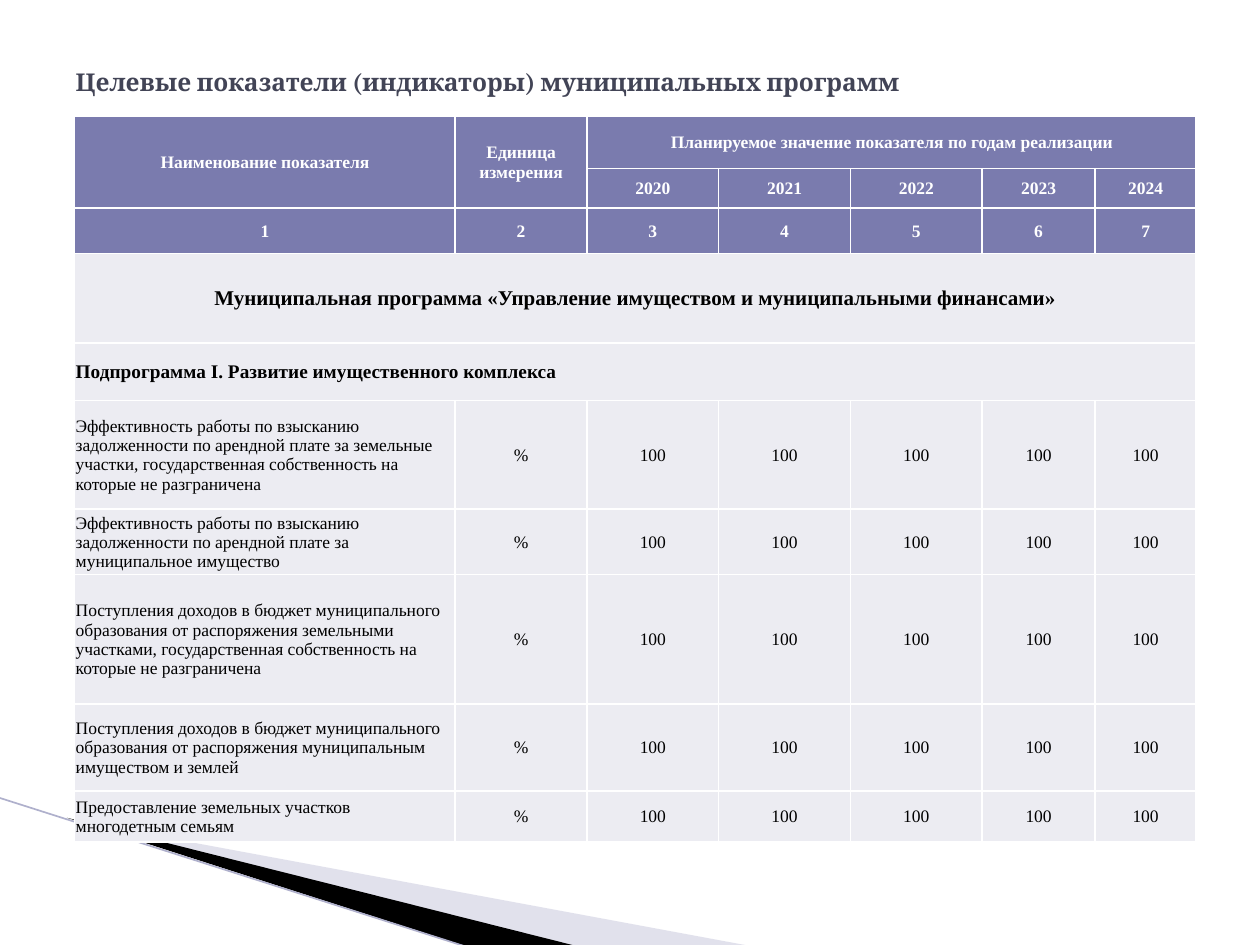
from lxml import etree
from pptx import Presentation
from pptx.dml.color import RGBColor
from pptx.enum.shapes import MSO_CONNECTOR
from pptx.enum.text import MSO_ANCHOR, MSO_AUTO_SIZE, PP_ALIGN
from pptx.oxml.ns import qn
from pptx.util import Pt

LEFT, CENTER = PP_ALIGN.LEFT, PP_ALIGN.CENTER
MIDDLE = MSO_ANCHOR.MIDDLE
STRAIGHT = MSO_CONNECTOR.STRAIGHT
NO_AUTOFIT = MSO_AUTO_SIZE.NONE
TITLE_ONLY = 5

COLORS = {
    "title": "424456", "head": "7A7BAE", "body": "ECECF2", "white": "FFFFFF",
    "black": "000000", "pale": "B6B6D1", "stripe": "AFB0CC",
}
TITLE = "Целевые показатели (индикаторы) муниципальных программ"
HEAD = [
    ["Наименование показателя", "Единица измерения",
     "Планируемое значение показателя по годам реализации"],
    [None, None, "2020", "2021", "2022", "2023", "2024"],
    ["1", "2", "3", "4", "5", "6", "7"],
]
PROGRAM = "Муниципальная программа «Управление имуществом и муниципальными финансами»"
SUBPROGRAM = "Подпрограмма I. Развитие имущественного комплекса"
INDICATORS = [
    "Эффективность работы по взысканию задолженности по арендной плате за земельные "
    "участки, государственная собственность на которые не разграничена",
    "Эффективность работы по взысканию задолженности по арендной плате за "
    "муниципальное имущество",
    "Поступления доходов в бюджет муниципального образования от распоряжения земельными "
    "участками, государственная собственность на которые не разграничена",
    "Поступления доходов в бюджет муниципального образования от распоряжения "
    "муниципальным имуществом и землей",
    "Предоставление земельных участков многодетным семьям",
]
UNIT_AND_VALUES = ["%"] + ["100"] * 5
ROWS = HEAD + [[PROGRAM], [SUBPROGRAM]] + [[name] + UNIT_AND_VALUES for name in INDICATORS]
PROGRAM_ROW = len(HEAD)
SUBPROGRAM_ROW = PROGRAM_ROW + 1
# first row, first column, last row, last column
MERGES = [(0, 0, 1, 0), (0, 1, 1, 1), (0, 2, 0, 6),
          (PROGRAM_ROW, 0, PROGRAM_ROW, 6), (SUBPROGRAM_ROW, 0, SUBPROGRAM_ROW, 6)]

TABLE_LEFT, TABLE_TOP = 42.7, 66.3
COLUMN_WIDTHS = [217.4, 75.4, 75.2, 75.4, 75.2, 64.6, 57.8]
ROW_HEIGHTS = [30, 22.6, 26, 51, 33, 62, 37.4, 74, 49.7, 29]

# corner points, colour, opacity in percent
WEDGES = [
    ([(39.6, 468.4), (428.4, 540.5), (328.3, 540.5)], "pale", 40),
    ([(38.2, 467.3), (329, 540.5), (267.8, 541.2)], "black", 100),
]
STRIPE = (-0.7, 455.8, 267.1, 541.2)


def color(name):
    return RGBColor.from_string(COLORS[name])


def write(frame, text, font="Times New Roman", size=10, bold=False, ink="black", align=CENTER):
    para = frame.paragraphs[0]
    para.alignment = align
    span = para.add_run()
    span.text = text
    span.font.name = font
    span.font.size = Pt(size)
    span.font.bold = bold
    span.font.color.rgb = color(ink)


def add_wedge(page, points, fill, opacity):
    corners = [(Pt(x), Pt(y)) for x, y in points]
    builder = page.shapes.build_freeform(*corners[0])
    builder.add_line_segments(corners[1:], close=True)
    wedge = builder.convert_to_shape()
    wedge.shadow.inherit = False
    wedge.line.fill.background()
    wedge.fill.solid()
    wedge.fill.fore_color.rgb = color(fill)
    if opacity < 100:
        tint = wedge.fill._xPr.find(".//" + qn("a:srgbClr"))
        etree.SubElement(tint, qn("a:alpha"), val=str(opacity * 1000))


def add_stripe(page):
    stripe = page.shapes.add_connector(STRAIGHT, *map(Pt, STRIPE))
    stripe.line.color.rgb = color("stripe")
    stripe.line.width = Pt(0.95)
    etree.SubElement(stripe._element.spPr, qn("a:effectLst"))


def style_cell(cell, fill):
    """Set borders, fill, margins and anchor; borders must precede the fill in the XML."""
    properties = cell._tc.get_or_add_tcPr()
    for side in ("lnL", "lnR", "lnT", "lnB"):
        border = etree.SubElement(properties, qn("a:" + side), w=str(Pt(1)))
        solid = etree.SubElement(border, qn("a:solidFill"))
        etree.SubElement(solid, qn("a:srgbClr"), val=COLORS["white"])
    cell.fill.solid()
    cell.fill.fore_color.rgb = color(fill)
    cell.margin_left = cell.margin_right = cell.margin_top = Pt(0.6)
    cell.margin_bottom = Pt(0)
    cell.vertical_anchor = MIDDLE


def text_format(row, column):
    if row < PROGRAM_ROW:
        return {"bold": True, "ink": "white"}
    if row == PROGRAM_ROW:
        return {"bold": True, "size": 12}
    if row == SUBPROGRAM_ROW:
        return {"bold": True, "size": 11, "align": LEFT}
    return {"align": CENTER if column else LEFT}


def add_indicator_table(page):
    table = page.shapes.add_table(
        len(ROW_HEIGHTS), len(COLUMN_WIDTHS), Pt(TABLE_LEFT), Pt(TABLE_TOP),
        Pt(sum(COLUMN_WIDTHS)), Pt(sum(ROW_HEIGHTS))).table
    table.horz_banding = False
    for column, width in zip(table.columns, COLUMN_WIDTHS):
        column.width = Pt(width)
    for row, height in zip(table.rows, ROW_HEIGHTS):
        row.height = Pt(height)
    for top, left, bottom, right in MERGES:
        table.cell(top, left).merge(table.cell(bottom, right))
    for r, texts in enumerate(ROWS):
        for c in range(len(COLUMN_WIDTHS)):
            style_cell(table.cell(r, c), "head" if r < PROGRAM_ROW else "body")
        for c, text in enumerate(texts):
            if text:
                write(table.cell(r, c).text_frame, text, **text_format(r, c))


def add_title(page):
    title = page.shapes.title
    title.left, title.top, title.width, title.height = Pt(36), Pt(21.6), Pt(648), Pt(49.7)
    frame = title.text_frame
    frame.auto_size = NO_AUTOFIT
    frame.vertical_anchor = MIDDLE
    write(frame, TITLE, font="Cambria", size=14, bold=True, ink="title", align=LEFT)


def main():
    deck = Presentation()
    deck.slide_width, deck.slide_height = Pt(720), Pt(540)
    page = deck.slides.add_slide(deck.slide_layouts[TITLE_ONLY])
    for wedge in WEDGES:
        add_wedge(page, *wedge)
    add_stripe(page)
    add_title(page)
    add_indicator_table(page)
    deck.save("out.pptx")


if __name__ == "__main__":
    main()
